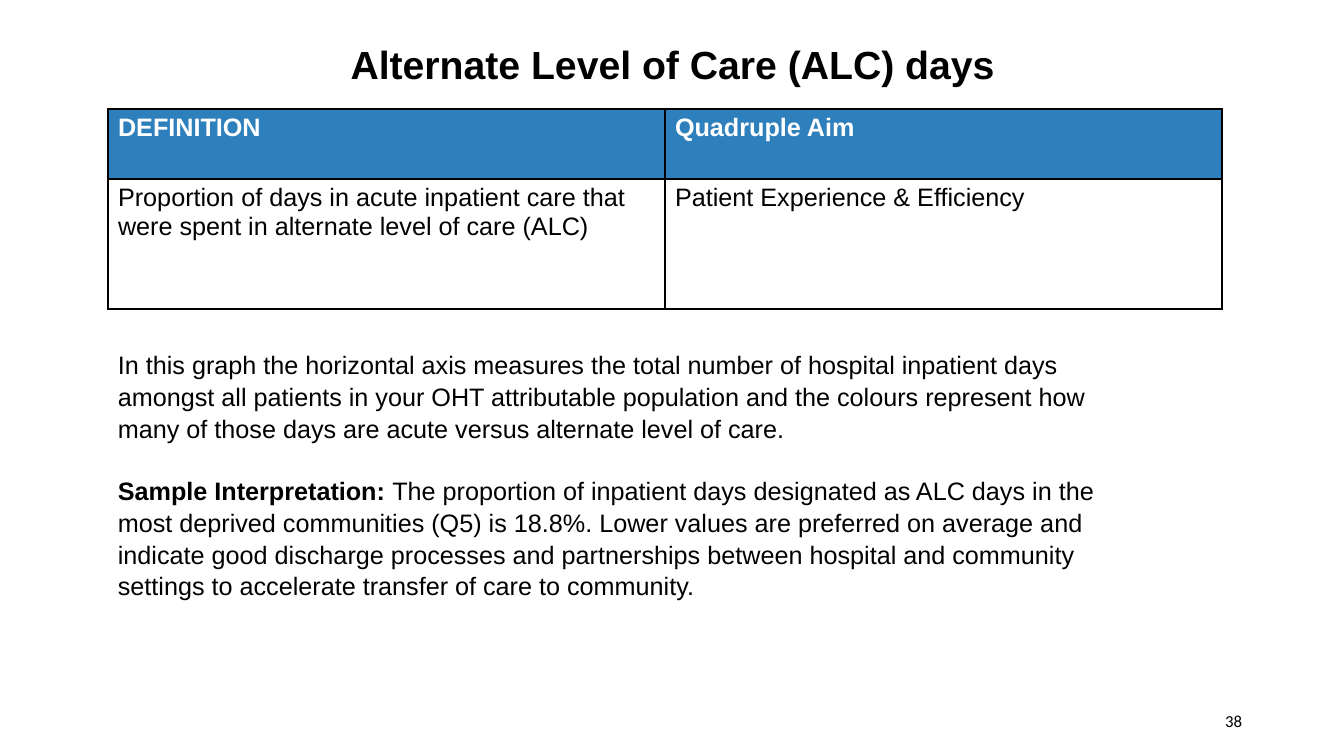
from lxml import etree
from pptx import Presentation
from pptx import util as u
from pptx.dml.color import RGBColor
from pptx.enum import text
from pptx.oxml import ns

TITLE = "Alternate Level of Care (ALC) days"
PAGE_NUMBER = "38"
TABLE_ROWS = [
    ["DEFINITION", "Quadruple Aim"],
    ["Proportion of days in acute inpatient care that were spent in "
     "alternate level of care (ALC)",
     "Patient Experience & Efficiency"],
]
# Each paragraph is a list of (text, bold) spans.
EXPLANATION = [
    [("In this graph the horizontal axis measures the total number of hospital "
      "inpatient days amongst all patients in your OHT attributable population "
      "and the colours represent how many of those days are acute versus "
      "alternate level of care.", False)],
    [("Sample Interpretation: ", True),
     ("The proportion of inpatient days designated as ALC days in the most "
      "deprived communities (Q5) is 18.8%. Lower values are preferred on average "
      "and indicate good discharge processes and partnerships between hospital "
      "and community settings to accelerate transfer of care to community.",
      False)],
]

COLOURS = {"ink": "000000", "paper": "FFFFFF", "header": "2E80BC"}
PX = 914400 / 100.8
SLIDE_SIZE = (1344, 756)
TITLE_AREA = (78, 24, 1189, 85)
TABLE_AREA = (108, 109, 1114, 200)
ROW_HEIGHTS = (70, 130)
EXPLANATION_AREA = (108, 343, 1040, 254)
NUMBER_AREA = (950, 701, 302, 40)


def px(length):
    return u.Emu(round(length * PX))


def write(frame, paragraphs, size=18, font="Arial", colour="ink",
          align=text.PP_ALIGN.LEFT, anchor=text.MSO_ANCHOR.TOP,
          spacing=None, gap=0):
    """Fill a text frame with paragraphs of (text, bold) spans."""
    frame.word_wrap = True
    frame.vertical_anchor = anchor
    for index, spans in enumerate(paragraphs):
        para = frame.add_paragraph() if index else frame.paragraphs[0]
        para.alignment = align
        para.line_spacing = spacing
        para.space_before = u.Pt(gap if index else 0)
        for wording, bold in spans:
            span = para.add_run()
            span.text = wording
            span.font.size = u.Pt(size)
            span.font.name = font
            span.font.bold = bold
            span.font.color.rgb = RGBColor.from_string(COLOURS[colour])


def outline(cell):
    """Draw a 1 pt line on all four sides of a table cell."""
    properties = cell._tc.get_or_add_tcPr()
    for position, side in enumerate(("lnL", "lnR", "lnT", "lnB")):
        line = etree.Element(ns.qn(f"a:{side}"), w=str(u.Pt(1)))
        fill = etree.SubElement(line, ns.qn("a:solidFill"))
        etree.SubElement(fill, ns.qn("a:srgbClr"), val=COLOURS["ink"])
        properties.insert(position, line)


def add_definition_table(page):
    frame = page.shapes.add_table(len(TABLE_ROWS), len(TABLE_ROWS[0]),
                                  *map(px, TABLE_AREA))
    table = frame.table
    for column in table.columns:
        column.width = px(TABLE_AREA[2] / len(TABLE_ROWS[0]))
    for r, wordings in enumerate(TABLE_ROWS):
        is_header = r == 0
        table.rows[r].height = px(ROW_HEIGHTS[r])
        for c, wording in enumerate(wordings):
            cell = table.cell(r, c)
            cell.fill.solid()
            cell.fill.fore_color.rgb = RGBColor.from_string(
                COLOURS["header" if is_header else "paper"])
            outline(cell)
            cell.vertical_anchor = text.MSO_ANCHOR.TOP
            write(cell.text_frame, [[(wording, is_header)]],
                  colour="paper" if is_header else "ink", anchor=None)


def main():
    deck = Presentation()
    deck.slide_width, deck.slide_height = map(px, SLIDE_SIZE)
    page = deck.slides.add_slide(deck.slide_layouts[5])

    title = page.shapes.title
    title.left, title.top, title.width, title.height = map(px, TITLE_AREA)
    write(title.text_frame, [[(TITLE, True)]], size=28, spacing=0.9,
          align=text.PP_ALIGN.CENTER, anchor=text.MSO_ANCHOR.MIDDLE)

    add_definition_table(page)

    explanation = page.shapes.add_textbox(*map(px, EXPLANATION_AREA))
    write(explanation.text_frame, EXPLANATION, spacing=1.05, gap=22)

    number = page.shapes.add_textbox(*map(px, NUMBER_AREA))
    write(number.text_frame, [[(PAGE_NUMBER, False)]], size=12, font="Calibri",
          align=text.PP_ALIGN.RIGHT, anchor=text.MSO_ANCHOR.MIDDLE)

    deck.save("out.pptx")


if __name__ == "__main__":
    main()
